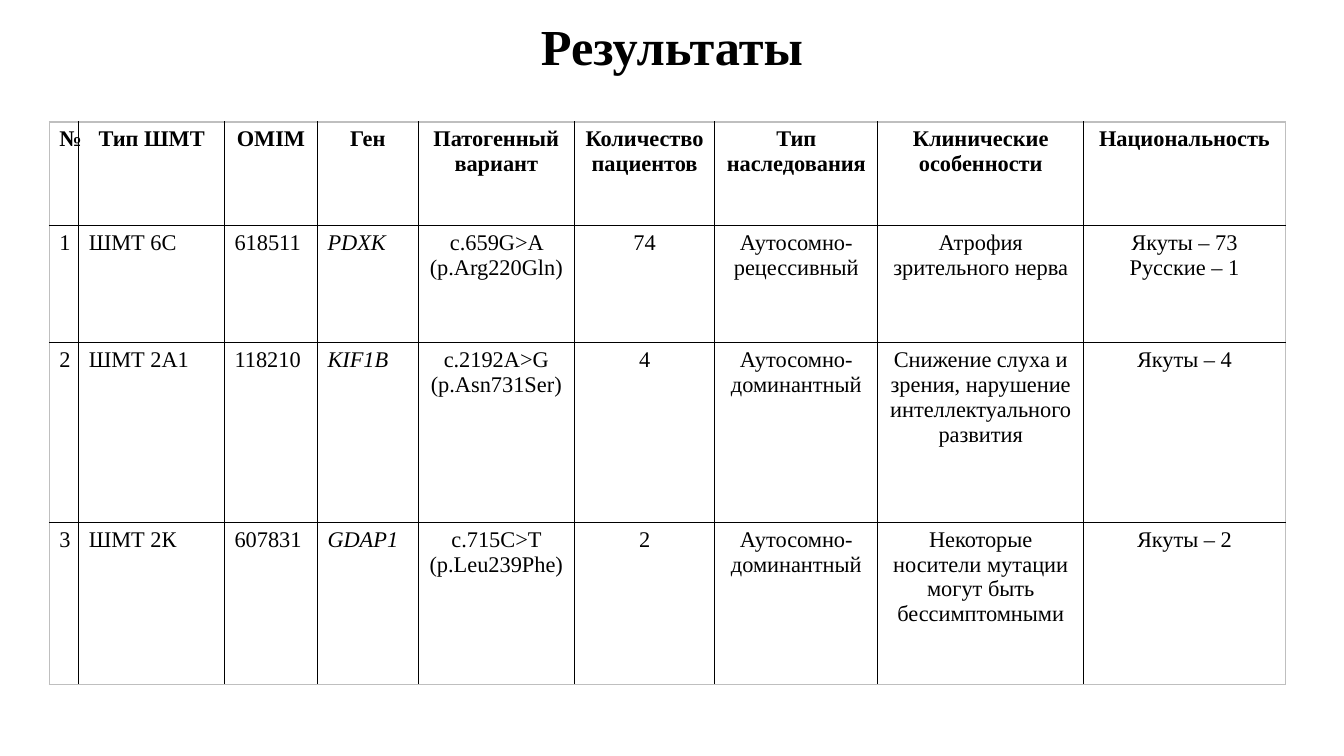
from lxml import etree
from pptx import Presentation
from pptx.dml.color import RGBColor
from pptx.enum import text
from pptx.oxml import ns
from pptx.util import Pt

FONT = "Times New Roman"
BLACK, GREY = "000000", "BFBFBF"
LEFT, CENTER = text.PP_ALIGN.LEFT, text.PP_ALIGN.CENTER
GENE_COL = 3
COL_WIDTHS = [21, 104.1, 66.4, 72, 111.5, 100.4, 116.4, 147.1, 144]
ROW_HEIGHTS = [74.2, 83.5, 128.2, 115.9]
ROWS = [
    ["№", "Тип ШМТ", "OMIM", "Ген", "Патогенный вариант",
     "Количество пациентов", "Тип наследования",
     "Клинические особенности", "Национальность"],
    ["1", "ШМТ 6С", "618511", "PDXK", "с.659G>A (p.Arg220Gln)", "74",
     "Аутосомно-рецессивный", "Атрофия зрительного нерва",
     "Якуты – 73\nРусские – 1"],
    ["2", "ШМТ 2А1", "118210", "KIF1B", "с.2192А>G (p.Asn731Ser)", "4",
     "Аутосомно-доминантный",
     "Снижение слуха и зрения, нарушение интеллектуального развития",
     "Якуты – 4"],
    ["3", "ШМТ 2К", "607831", "GDAP1", "с.715С>T (p.Leu239Phe)", "2",
     "Аутосомно-доминантный",
     "Некоторые носители мутации могут быть бессимптомными",
     "Якуты – 2"],
]


def color(hex_string):
    return RGBColor.from_string(hex_string)


def style(p, size, align, bold=False, italic=False):
    p.alignment = align
    p.font.name, p.font.size = FONT, Pt(size)
    p.font.bold, p.font.italic = bold, italic
    p.font.color.rgb = color(BLACK)


def set_borders(cell, sides):
    """Give each named side of the cell a 1 pt line of its colour."""
    tcPr = cell._tc.get_or_add_tcPr()
    for side, hex_string in sides.items():
        ln = etree.SubElement(tcPr, ns.qn(f"a:ln{side}"), w=str(Pt(1)))
        fill = etree.SubElement(ln, ns.qn("a:solidFill"))
        etree.SubElement(fill, ns.qn("a:srgbClr"), val=hex_string)


def add_title(slide, x, y, w, h):
    tf = slide.shapes.add_textbox(Pt(x), Pt(y), Pt(w), Pt(h)).text_frame
    tf.word_wrap = True
    tf.vertical_anchor = text.MSO_ANCHOR.MIDDLE
    p = tf.paragraphs[0]
    p.text = "Результаты"
    p.line_spacing = 0.9
    style(p, 36, CENTER, bold=True)


def add_results(slide, x, y, w, h):
    n_rows, n_cols = len(ROWS), len(COL_WIDTHS)
    table = slide.shapes.add_table(
        n_rows, n_cols, Pt(x), Pt(y), Pt(w), Pt(h)).table
    table.first_row = table.horz_banding = False

    # Column and row sizes fill the given box
    for col, width in zip(table.columns, COL_WIDTHS):
        col.width = Pt(w * width / sum(COL_WIDTHS))
    for row, height in zip(table.rows, ROW_HEIGHTS):
        row.height = Pt(h * height / sum(ROW_HEIGHTS))

    # Cells: grey outer frame, black inner grid
    for r, values in enumerate(ROWS):
        for c, value in enumerate(values):
            cell = table.cell(r, c)
            set_borders(cell, {
                "L": GREY if c == 0 else BLACK,
                "R": GREY if c == n_cols - 1 else BLACK,
                "T": GREY if r == 0 else BLACK,
                "B": GREY if r == n_rows - 1 else BLACK,
            })
            cell.fill.background()
            cell.text = value
            header = r == 0
            align = CENTER if header or c > GENE_COL else LEFT
            for p in cell.text_frame.paragraphs:
                style(p, 16, align, bold=header,
                      italic=c == GENE_COL and not header)


def main():
    prs = Presentation()
    prs.slide_width, prs.slide_height = Pt(960), Pt(540)
    slide = prs.slides.add_slide(prs.slide_layouts[6])
    add_title(slide, 66, -17.3, 828, 104.4)
    add_results(slide, 35.3, 87.1, 882.9, 401.8)
    prs.save("out.pptx")


if __name__ == "__main__":
    main()
